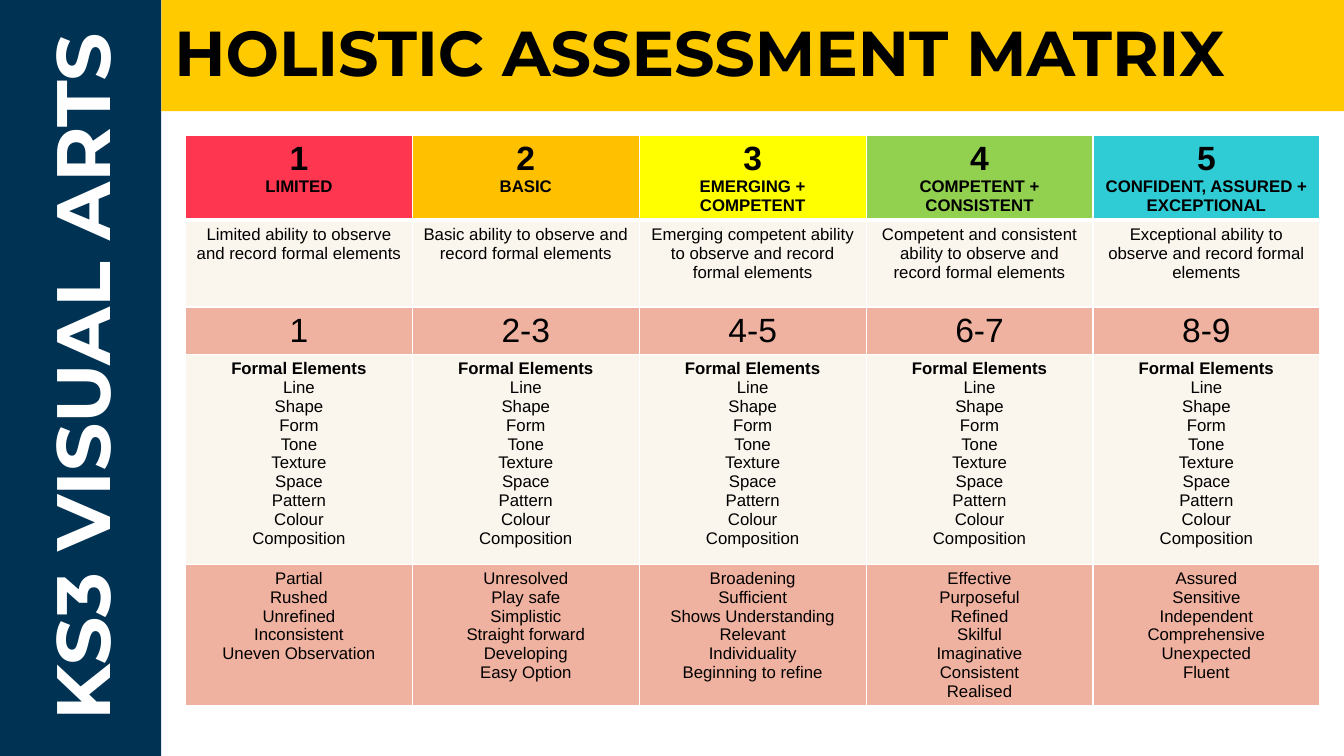
"""Build the visual arts holistic assessment matrix slide."""
from lxml.etree import SubElement as Sub
from pptx import Presentation
from pptx.dml.color import RGBColor as RGB
from pptx.enum.shapes import MSO_SHAPE as SHAPE
from pptx.enum.text import MSO_ANCHOR as ANCHOR, PP_ALIGN as ALIGN
from pptx.oxml.ns import qn
from pptx.util import Inches, Pt


def paint(fill, color):
    fill.solid()
    fill.fore_color.rgb = RGB.from_string(color)


def write(frame, text, size=12, bold=False, face="Arial", color="000000", align=ALIGN.CENTER):
    para = frame.add_paragraph() if frame.text else frame.paragraphs[0]
    para.alignment = align
    run = para.add_run()
    run.text = text
    run.font.size, run.font.bold, run.font.name = Pt(size), bold, face
    paint(run.font.fill, color)
    return para


deck = Presentation()
deck.slide_width, deck.slide_height = Inches(13.33), Inches(7.5)
wide, high = deck.slide_width, deck.slide_height
slide = deck.slides.add_slide(deck.slide_layouts[6])

side = int(wide * 0.12)
head = int(high * 0.147)
bands = [
    (side, 0, wide - side, head, "FFCB00", "HOLISTIC ASSESSMENT MATRIX", 45.3, "000000"),
    (0, 0, side, high, "003253", "KS3 VISUAL ARTS", 54, "FFFFFF"),
]
for left, top, width, height, back, text, size, ink in bands:
    band = slide.shapes.add_shape(SHAPE.RECTANGLE, left, top, width, height)
    band.shadow.inherit = False
    band.line.fill.background()
    paint(band.fill, back)
    frame = band.text_frame
    frame.margin_left = frame.margin_right = Inches(0.13)
    frame.margin_top = frame.margin_bottom = Inches(0.13)
    frame.vertical_anchor = ANCHOR.TOP
    para = write(frame, text, size=size, bold=True, face="Montserrat", color=ink, align=ALIGN.LEFT)

frame.vertical_anchor = ANCHOR.MIDDLE
frame._txBody.bodyPr.set("vert", "vert270")
para._p.get_or_add_pPr().set("marL", str(Inches(0.22)))

levels = [
    ("FF3650", "LIMITED", "Limited ability to observe and record formal elements", "1",
     ["Partial", "Rushed", "Unrefined", "Inconsistent", "Uneven Observation"]),
    ("FFC000", "BASIC", "Basic ability to observe and record formal elements", "2-3",
     ["Unresolved", "Play safe", "Simplistic", "Straight forward", "Developing", "Easy Option"]),
    ("FFFF00", "EMERGING + COMPETENT",
     "Emerging competent ability to observe and record formal elements", "4-5",
     ["Broadening", "Sufficient", "Shows Understanding", "Relevant", "Individuality",
      "Beginning to refine"]),
    ("92D050", "COMPETENT + CONSISTENT",
     "Competent and consistent ability to observe and record formal elements", "6-7",
     ["Effective", "Purposeful", "Refined", "Skilful", "Imaginative", "Consistent", "Realised"]),
    ("2FCCD6", "CONFIDENT, ASSURED + EXCEPTIONAL",
     "Exceptional ability to observe and record formal elements", "8-9",
     ["Assured", "Sensitive", "Independent", "Comprehensive", "Unexpected", "Fluent"]),
]
parts = ["Line", "Shape", "Form", "Tone", "Texture", "Space", "Pattern", "Colour", "Composition"]
rows = [0.82, 0.86, 0.47, 2.08, 1.4]
cream, peach = "FAF5ED", "F0B2A0"

grid = slide.shapes.add_table(len(rows), len(levels), Inches(1.84), Inches(1.34),
                              Inches(2.25 * len(levels)), Inches(sum(rows))).table
grid.first_row = grid.horz_banding = False
for row, height in zip(grid.rows, rows):
    row.height = Inches(height)

for col, (hue, name, skill, grade, traits) in enumerate(levels):
    cells = [
        (hue, [(str(col + 1), 24, True), (name, 12, True)]),
        (cream, [(skill, 12, False)]),
        (peach, [(grade, 24, False)]),
        (cream, [("Formal Elements", 12, True)] + [(part, 12, False) for part in parts]),
        (peach, [(trait, 12, False) for trait in traits]),
    ]
    for row, (back, lines) in enumerate(cells):
        cell = grid.cell(row, col)
        for text, size, bold in lines:
            write(cell.text_frame, text, size=size, bold=bold)
        props = cell._tc.get_or_add_tcPr()
        for edge in "LRTB":
            thick = 3 if (row, edge) in [(0, "B"), (1, "T")] else 1
            line = Sub(props, qn("a:ln" + edge), w=str(Pt(thick)))
            Sub(Sub(line, qn("a:solidFill")), qn("a:srgbClr"), val="FFFFFF")
        paint(cell.fill, back)

deck.save("out.pptx")
